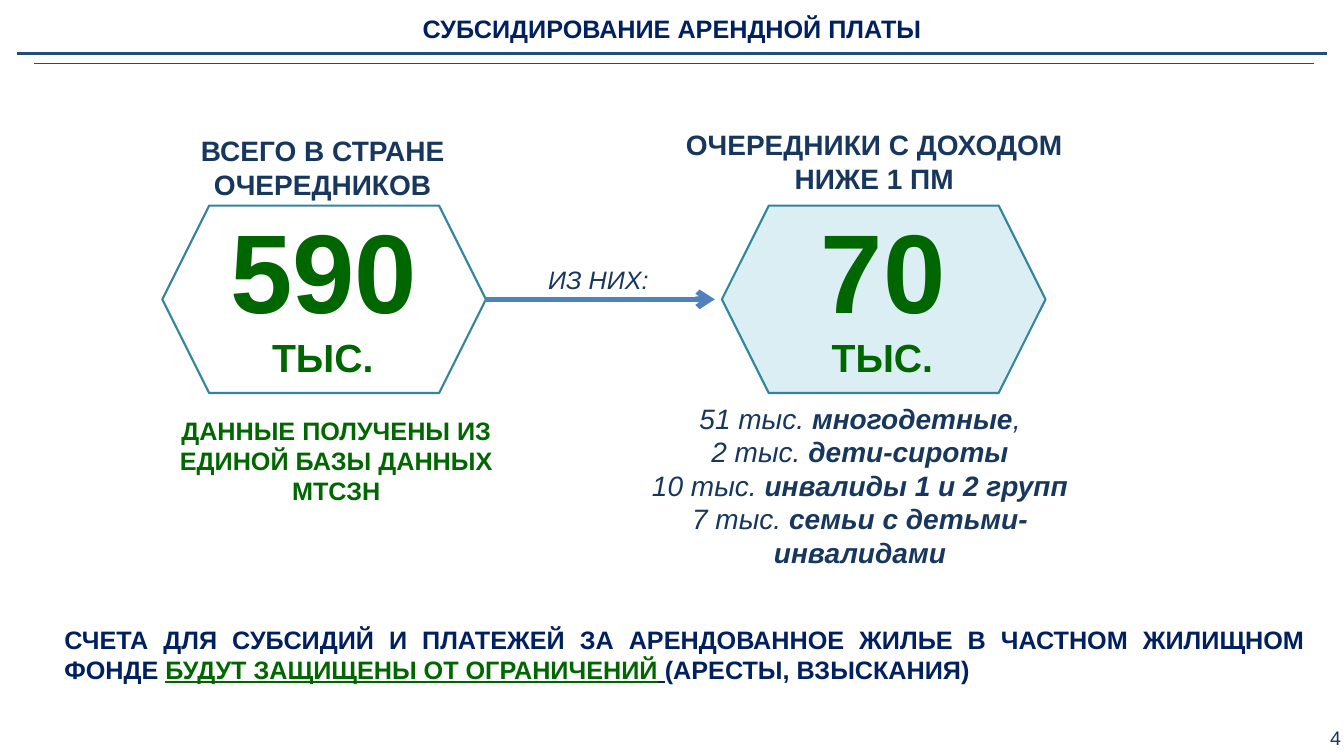
from lxml import etree
from pptx import Presentation
from pptx.dml.color import RGBColor
from pptx.enum.shapes import MSO_CONNECTOR, MSO_SHAPE
from pptx.enum.text import MSO_ANCHOR, PP_ALIGN
from pptx.oxml.ns import qn
from pptx.util import Pt

PX = 9144  # 100 px to the inch
FONT = "Arial"
COLORS = {
    "navy": "002060", "slate": "17375E", "green": "006600", "rule": "1E4E79",
    "teal": "31859C", "ice": "DBEEF4", "arrow": "4F81BD",
}
LEFT, CENTER, RIGHT = PP_ALIGN.LEFT, PP_ALIGN.CENTER, PP_ALIGN.RIGHT
JUSTIFY = PP_ALIGN.JUSTIFY
TOP, MIDDLE = MSO_ANCHOR.TOP, MSO_ANCHOR.MIDDLE
STRAIGHT, HEXAGON = MSO_CONNECTOR.STRAIGHT, MSO_SHAPE.HEXAGON

BOLD = {"bold": True}
ITALIC = {"italic": True}
BOLD_ITALIC = {"bold": True, "italic": True}


def px(*lengths):
    return [length * PX for length in lengths]


def rgb(name):
    return RGBColor.from_string(COLORS[name])


def add_text(slide, box, paragraphs, size, color, align=CENTER,
             anchor=TOP, margins=(10, 5), wrap=True):
    """Each paragraph is a list of (text, font options) runs."""
    frame = slide.shapes.add_textbox(*px(*box)).text_frame
    frame.word_wrap = wrap
    frame.vertical_anchor = anchor
    frame.margin_left = frame.margin_right = margins[0] * PX
    frame.margin_top = frame.margin_bottom = margins[1] * PX
    for index, runs in enumerate(paragraphs):
        paragraph = frame.add_paragraph() if index else frame.paragraphs[0]
        paragraph.alignment = align
        for text, options in runs:
            run = paragraph.add_run()
            run.text = text
            font = run.font
            font.name, font.size = FONT, Pt(size)
            font.color.rgb = rgb(options.get("color", color))
            font.bold = options.get("bold", False)
            font.italic = options.get("italic", False)
            font.underline = options.get("underline", False)


def add_line(slide, start_x, end_x, y, color, width, arrow=False):
    line = slide.shapes.add_connector(STRAIGHT, *px(start_x, y, end_x, y))
    line.line.color.rgb = rgb(color)
    line.line.width = Pt(width)
    if arrow:
        outline = line.line._get_or_add_ln()
        etree.SubElement(outline, qn("a:tailEnd"), type="arrow")
    etree.SubElement(line._element.spPr, qn("a:effectLst"))


def add_count(slide, left, number, fill=None):
    """Hexagon with a large number and its unit."""
    hexagon = slide.shapes.add_shape(HEXAGON, *px(left, 204, 321, 186))
    hexagon.shadow.inherit = False
    hexagon.line.color.rgb = rgb("teal")
    hexagon.line.width = Pt(1.5)
    if fill:
        hexagon.fill.solid()
        hexagon.fill.fore_color.rgb = rgb(fill)
    else:
        hexagon.fill.background()
    add_text(slide, (left - 2, 195, 324, 145), [[(number, BOLD)]], 80, "green")
    add_text(slide, (left + 99, 326, 122, 57), [[("ТЫС.", BOLD)]], 28, "green",
             align=LEFT, wrap=False)


def main():
    prs = Presentation()
    prs.slide_width, prs.slide_height = px(1333, 750)
    slide = prs.slides.add_slide(prs.slide_layouts[6])

    # Header and page number
    add_text(slide, (0, 4, 1333, 48), [[("СУБСИДИРОВАНИЕ АРЕНДНОЙ ПЛАТЫ", BOLD)]],
             18, "navy", anchor=MIDDLE, margins=(7, 4))
    add_line(slide, 17, 1316, 53, "rule", 2.25)
    add_line(slide, 34, 1303, 63, "rule", 1)
    add_text(slide, (1279, 713, 54, 37), [[("4", {})]], 14, "slate",
             align=RIGHT, anchor=MIDDLE, margins=(3, 7))

    # Everyone in the queue
    add_count(slide, 161, "590")
    add_text(slide, (159, 128, 322, 77),
             [[("ВСЕГО В СТРАНЕ", BOLD)], [("ОЧЕРЕДНИКОВ", BOLD)]], 20, "slate")
    add_text(slide, (161, 407, 345, 101),
             [[("ДАННЫЕ ПОЛУЧЕНЫ ИЗ ЕДИНОЙ БАЗЫ ДАННЫХ МТСЗН", BOLD)]], 18, "green")

    # Link between the two counts
    add_line(slide, 481, 709, 297, "arrow", 4, arrow=True)
    add_text(slide, (513, 257, 161, 40), [[("ИЗ НИХ:", ITALIC)]], 18, "slate")

    # Those with low income, by group
    add_count(slide, 716, "70", "ice")
    add_text(slide, (663, 122, 408, 77),
             [[("ОЧЕРЕДНИКИ С ДОХОДОМ НИЖЕ 1 ПМ", BOLD)]], 20, "slate")
    groups = [
        [("51 тыс. ", ITALIC), ("многодетные", BOLD_ITALIC), (",", ITALIC)],
        [("2 тыс. ", ITALIC), ("дети-сироты", BOLD_ITALIC)],
        [("10 тыс. ", ITALIC), ("инвалиды 1 и 2 групп", BOLD_ITALIC)],
        [("7 тыс. ", ITALIC), ("семьи с детьми-инвалидами", BOLD_ITALIC)],
    ]
    add_text(slide, (598, 393, 510, 145), groups, 20, "slate")

    # Closing statement
    protected = {"bold": True, "underline": True, "color": "green"}
    gap = {"bold": True, "underline": True}
    add_text(slide, (54, 614, 1250, 71), [[
        ("СЧЕТА ДЛЯ СУБСИДИЙ И ПЛАТЕЖЕЙ ЗА АРЕНДОВАННОЕ ЖИЛЬЕ "
         "В ЧАСТНОМ ЖИЛИЩНОМ ФОНДЕ ", BOLD),
        ("БУДУТ ЗАЩИЩЕНЫ ОТ ОГРАНИЧЕНИЙ", protected),
        (" ", gap),
        ("(АРЕСТЫ, ВЗЫСКАНИЯ)", BOLD),
    ]], 18, "navy", align=JUSTIFY)

    prs.save("out.pptx")


if __name__ == "__main__":
    main()
